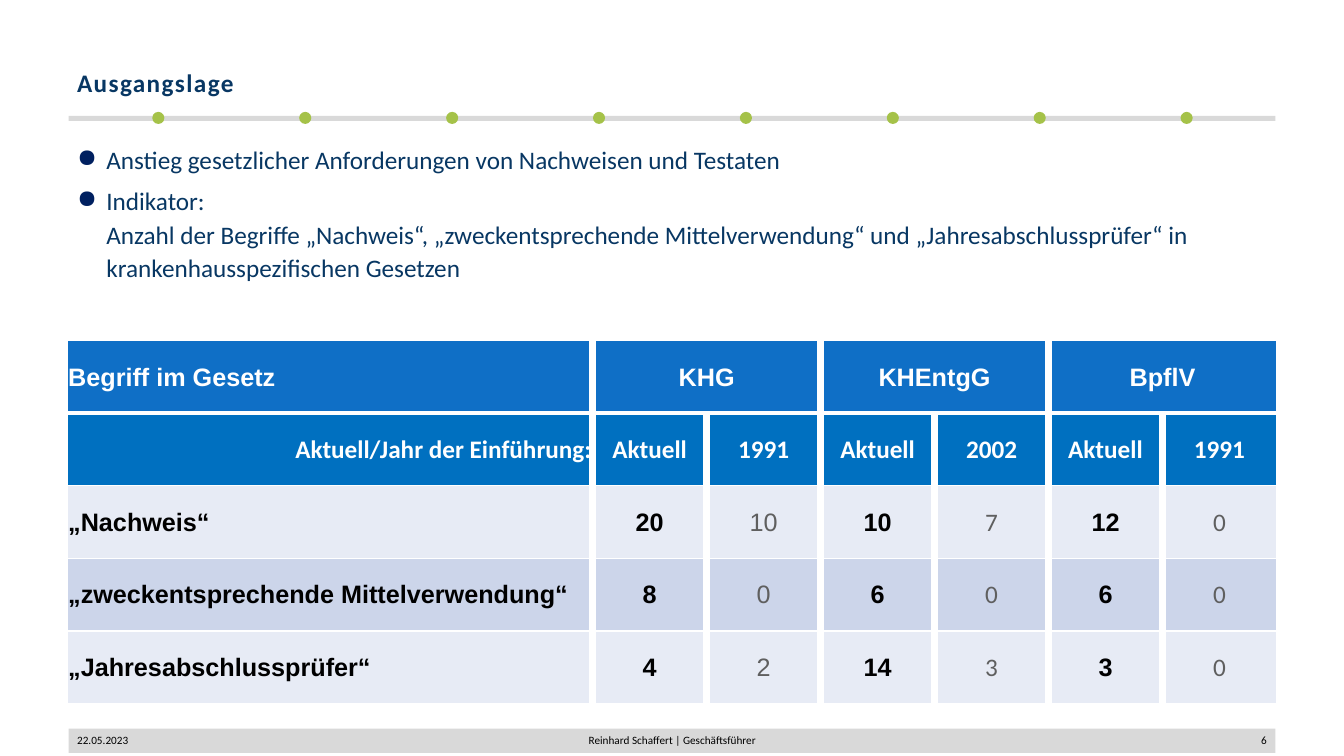
"""Build the slide on legal terms in hospital legislation."""
from dataclasses import dataclass

from lxml import etree
from pptx import Presentation
from pptx.dml.color import RGBColor
from pptx.enum.shapes import MSO_SHAPE
from pptx.enum.text import MSO_ANCHOR, PP_ALIGN
from pptx.oxml.ns import qn
from pptx.util import Emu, Inches, Pt

RECTANGLE, OVAL = MSO_SHAPE.RECTANGLE, MSO_SHAPE.OVAL
TOP, MIDDLE, BOTTOM = MSO_ANCHOR.TOP, MSO_ANCHOR.MIDDLE, MSO_ANCHOR.BOTTOM
LEFT, CENTER, RIGHT = PP_ALIGN.LEFT, PP_ALIGN.CENTER, PP_ALIGN.RIGHT

SLIDE_WIDTH, SLIDE_HEIGHT = Inches(13.33), Inches(7.5)
NAVY, BULLET, GRAY, GREEN = "083763", "002060", "D9D9D9", "A5C249"
WHITE, BLACK, MUTED = "FFFFFF", "000000", "5F5F5F"
ROW_FILLS = ["0F6FC6", "0070C0", "E7EBF5", "CCD5EA", "E7EBF5"]
THIN, HEADER_RULE, COLUMN_GAP = 1, 3, 6

DOT_COUNT, DOT_START, DOT_PITCH = 8, 11.33, 10.93
LABEL_WIDTH, VALUE_WIDTH, ROW_HEIGHT = 39.1, 8.48, 9.6

BULLETS = [
    "Anstieg gesetzlicher Anforderungen von Nachweisen und Testaten",
    "Indikator: \vAnzahl der Begriffe „Nachweis“, „zweckentsprechende Mittelverwendung“ "
    "und „Jahresabschlussprüfer“ in krankenhausspezifischen Gesetzen",
]
ROWS = [
    ["Begriff im Gesetz", "KHG", "", "KHEntgG", "", "BpflV", ""],
    ["Aktuell/Jahr der Einführung:", "Aktuell", "1991", "Aktuell", "2002", "Aktuell", "1991"],
    ["„Nachweis“", "20", "10", "10", "7", "12", "0"],
    ["„zweckentsprechende Mittelverwendung“", "8", "0", "6", "0", "6", "0"],
    ["„Jahresabschlussprüfer“", "4", "2", "14", "3", "3", "0"],
]


@dataclass(frozen=True)
class Box:
    """Place on the slide in percent of its width and height."""
    left: float
    top: float
    width: float
    height: float

    def lengths(self) -> tuple[Emu, Emu, Emu, Emu]:
        return across(self.left), down(self.top), across(self.width), down(self.height)


@dataclass(frozen=True)
class Style:
    """Look of a paragraph."""
    size: float
    color: str
    bold: bool = False
    face: str = "Calibri"
    align: PP_ALIGN = LEFT


@dataclass(frozen=True)
class Label:
    """Text box with one or more paragraphs."""
    box: Box
    texts: list[str]
    style: Style
    anchor: MSO_ANCHOR = MIDDLE
    tracking: int = 0
    bulleted: bool = False


@dataclass(frozen=True)
class Ornament:
    """Plain filled shape."""
    kind: MSO_SHAPE
    box: Box
    color: str


ORNAMENTS = [
    Ornament(RECTANGLE, Box(5.1, 96.4, 89.8, 3.2), GRAY),
    Ornament(RECTANGLE, Box(5.1, 15.33, 89.8, 0.67), GRAY),
    *(Ornament(OVAL, Box(DOT_START + index * DOT_PITCH, 14.8, 0.9, 1.6), GREEN)
      for index in range(DOT_COUNT)),
]
LABELS = [
    Label(Box(5, 2.4, 69.24, 11.2), ["Ausgangslage"], Style(18, NAVY, bold=True), BOTTOM, tracking=100),
    Label(Box(5, 18, 90, 25), BULLETS, Style(18, NAVY), TOP, bulleted=True),
    Label(Box(5, 96.5, 23.33, 2.8), ["22.05.2023"], Style(8, BLACK)),
    Label(Box(34.2, 96.5, 31.66, 2.8), ["Reinhard Schaffert | Geschäftsführer"],
          Style(8, BLACK, align=CENTER)),
    Label(Box(71.7, 96.5, 23.3, 2.8), ["6"], Style(8, BLACK, align=RIGHT)),
]
TABLE_BOX = Box(5, 45.07, 90, 48)


def across(percent: float) -> Emu:
    return Emu(round(SLIDE_WIDTH * percent / 100))


def down(percent: float) -> Emu:
    return Emu(round(SLIDE_HEIGHT * percent / 100))


def color_of(value: str) -> RGBColor:
    return RGBColor.from_string(value)


def apply_style(paragraph, style: Style) -> None:
    paragraph.alignment = style.align
    font = paragraph.font
    font.size, font.bold, font.name = Pt(style.size), style.bold, style.face
    font.color.rgb = color_of(style.color)


def add_bullet(paragraph) -> None:
    properties = paragraph._p.get_or_add_pPr()
    indent = Inches(0.29)
    properties.set("marL", str(indent))
    properties.set("indent", str(-indent))
    bullet_color = etree.SubElement(properties, qn("a:buClr"))
    etree.SubElement(bullet_color, qn("a:srgbClr"), val=BULLET)
    etree.SubElement(properties, qn("a:buChar"), char="●")


def draw_ornament(slide, ornament: Ornament) -> None:
    shape = slide.shapes.add_shape(ornament.kind, *ornament.box.lengths())
    shape.shadow.inherit = False
    shape.fill.solid()
    shape.fill.fore_color.rgb = color_of(ornament.color)
    shape.line.fill.background()


def draw_label(slide, label: Label) -> None:
    frame = slide.shapes.add_textbox(*label.box.lengths()).text_frame
    frame.word_wrap = True
    frame.vertical_anchor = label.anchor
    for index, text in enumerate(label.texts):
        paragraph = frame.add_paragraph() if index else frame.paragraphs[0]
        paragraph.text = text
        if label.bulleted:
            add_bullet(paragraph)
            paragraph.line_spacing = 1.1
        if index:
            paragraph.space_before = Pt(6)
        if label.tracking:
            paragraph.runs[0]._r.get_or_add_rPr().set("spc", str(label.tracking))
        apply_style(paragraph, label.style)


def set_borders(cell, left: float, right: float, top: float, bottom: float) -> None:
    properties = cell._tc.get_or_add_tcPr()
    sides = {"a:lnL": left, "a:lnR": right, "a:lnT": top, "a:lnB": bottom}
    for position, (tag, width) in enumerate(sides.items()):
        line = etree.Element(qn(tag), w=str(Pt(width)))
        fill = etree.SubElement(line, qn("a:solidFill"))
        etree.SubElement(fill, qn("a:srgbClr"), val=WHITE)
        properties.insert(position, line)


def cell_style(row: int, column: int) -> Style:
    align = CENTER if column else RIGHT if row == 1 else LEFT
    if row < 2:
        return Style(18, WHITE, True, "Calibri" if row else "Arial", align)
    if column and column % 2 == 0:
        return Style(18, MUTED, False, "Arial" if column == 2 else "Calibri", align)
    return Style(18, BLACK, True, "Arial", align)


def draw_table(slide) -> None:
    row_count, column_count = len(ROWS), len(ROWS[0])
    table = slide.shapes.add_table(row_count, column_count, *TABLE_BOX.lengths()).table
    table.first_row = table.horz_banding = False
    for index, column in enumerate(table.columns):
        column.width = across(VALUE_WIDTH if index else LABEL_WIDTH)
    for row in table.rows:
        row.height = down(ROW_HEIGHT)
    for start in range(1, column_count, 2):
        table.cell(0, start).merge(table.cell(0, start + 1))
    for row, texts in enumerate(ROWS):
        for column, text in enumerate(texts):
            cell = table.cell(row, column)
            cell.fill.solid()
            cell.fill.fore_color.rgb = color_of(ROW_FILLS[row])
            cell.vertical_anchor = MIDDLE
            cell.margin_left = cell.margin_right = cell.margin_top = Inches(0.01)
            cell.margin_bottom = 0
            end = column + (cell.span_width if cell.is_merge_origin else 1)
            set_borders(cell, COLUMN_GAP if column else THIN,
                        COLUMN_GAP if end < column_count else THIN,
                        HEADER_RULE if row == 1 else THIN, THIN if row else HEADER_RULE)
            if text:
                cell.text = text
                apply_style(cell.text_frame.paragraphs[0], cell_style(row, column))


def main() -> None:
    presentation = Presentation()
    presentation.slide_width, presentation.slide_height = SLIDE_WIDTH, SLIDE_HEIGHT
    slide = presentation.slides.add_slide(presentation.slide_layouts[6])
    for ornament in ORNAMENTS:
        draw_ornament(slide, ornament)
    for label in LABELS:
        draw_label(slide, label)
    draw_table(slide)
    presentation.save("out.pptx")


if __name__ == "__main__":
    main()
